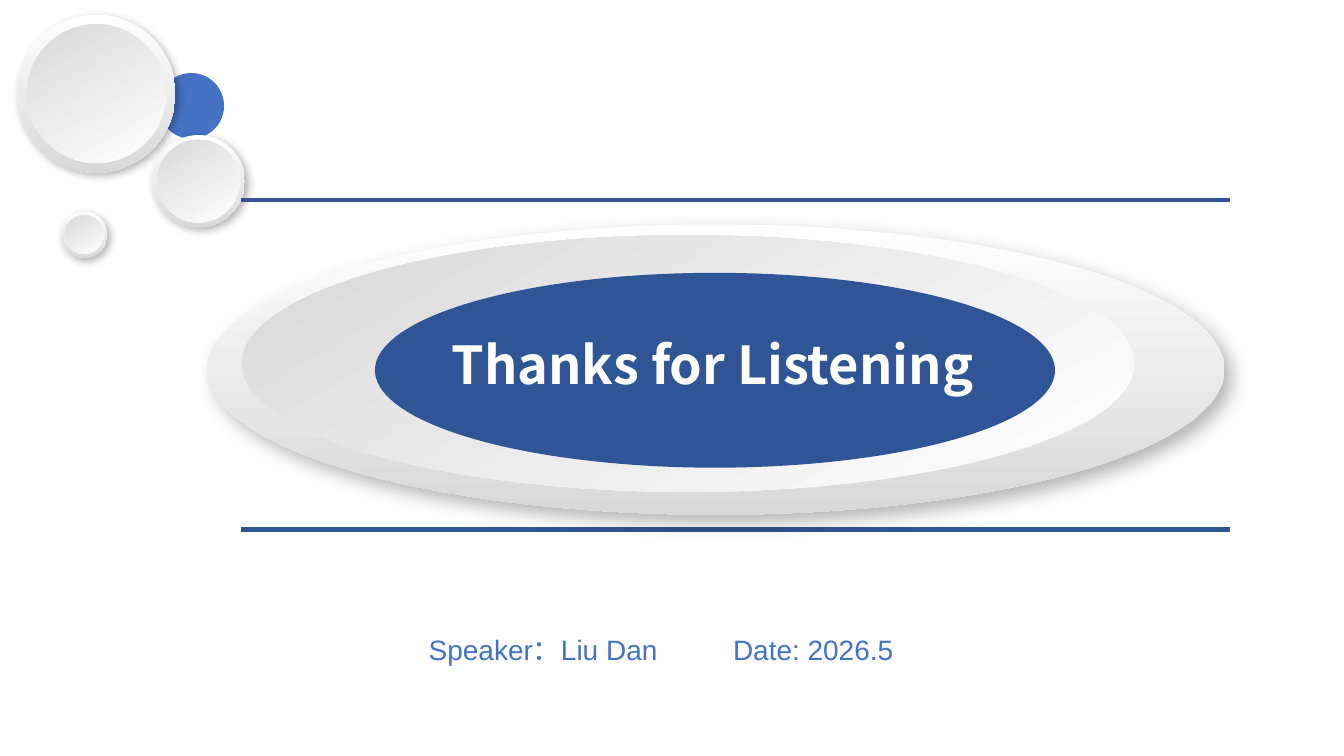
import pptx
import pptx.dml.color
import pptx.enum.shapes
import pptx.enum.text
import pptx.oxml
import pptx.oxml.ns
import pptx.util

RGBColor = pptx.dml.color.RGBColor
Inches = pptx.util.Inches
WHITE = RGBColor(0xFF, 0xFF, 0xFF)
SILVER = RGBColor(0xD9, 0xD9, 0xD9)
BLUE = RGBColor(0x44, 0x72, 0xC4)
NAVY = RGBColor(0x2F, 0x55, 0x97)
RULE_BLUE = RGBColor(0x32, 0x54, 0x91)

PAGE_WIDTH = 10
PAGE_HEIGHT = PAGE_WIDTH * 9 / 16
NAMESPACE = pptx.oxml.ns.nsdecls("a")


def add_ellipse(shapes, box):
    ellipse = shapes.add_shape(pptx.enum.shapes.MSO_SHAPE.OVAL, *map(Inches, box))
    ellipse.line.fill.background()
    ellipse.shadow.inherit = False
    return ellipse


def add_solid_ellipse(shapes, box, color):
    ellipse = add_ellipse(shapes, box)
    ellipse.fill.solid()
    ellipse.fill.fore_color.rgb = color


def add_silver_ellipse(shapes, box, angle):
    """Shade from white to silver; the angle runs counter-clockwise."""
    ellipse = add_ellipse(shapes, box)
    ellipse.fill.gradient()
    ellipse.fill.gradient_angle = angle
    for stop, color in zip(ellipse.fill.gradient_stops, (WHITE, SILVER)):
        stop.color.rgb = color
    return ellipse


def add_raised_ellipse(shapes, outer, inner, blur, distance):
    """Rim with a soft shadow and an inner face lit from the other side."""
    rim = add_silver_ellipse(shapes, outer, 270)
    effects = rim._element.spPr.find(pptx.oxml.ns.qn("a:effectLst"))
    effects.append(pptx.oxml.parse_xml(
        f'<a:outerShdw {NAMESPACE} blurRad="{pptx.util.Pt(blur)}" '
        f'dist="{pptx.util.Pt(distance)}" dir="2700000" algn="tl" rotWithShape="0">'
        '<a:srgbClr val="000000"><a:alpha val="30000"/></a:srgbClr></a:outerShdw>'))
    add_silver_ellipse(shapes, inner, 120)


def add_text(shapes, box, text, font_name, size, color, bold=False):
    text_box = shapes.add_textbox(*map(Inches, box))
    frame = text_box.text_frame
    frame.margin_left = frame.margin_right = frame.margin_top = frame.margin_bottom = 0
    frame.word_wrap = True
    frame.auto_size = pptx.enum.text.MSO_AUTO_SIZE.SHAPE_TO_FIT_TEXT
    span = frame.paragraphs[0].add_run()
    span.text = text
    span.font.name = font_name
    span.font.size = pptx.util.Pt(size)
    span.font.bold = bold
    span.font.color.rgb = color


def add_rule(page, left, top, width):
    rule = page.shapes.add_connector(
        pptx.enum.shapes.MSO_CONNECTOR.STRAIGHT,
        Inches(left), Inches(top), Inches(left + width), Inches(top))
    rule.line.color.rgb = RULE_BLUE
    rule.line.width = pptx.util.Pt(2.25)
    rule._element.spPr.append(pptx.oxml.parse_xml(f"<a:effectLst {NAMESPACE}/>"))


def add_corner_discs(page, left, top, size):
    """Blue dot and three raised discs, as shares of the cluster size."""
    def square(center_x, center_y, diameter):
        return (left + (center_x - diameter / 2) * size,
                top + (center_y - diameter / 2) * size,
                diameter * size, diameter * size)

    add_solid_ellipse(page.shapes, square(0.72, 0.38, 0.27), BLUE)
    # Center x, center y, rim diameter, face diameter
    discs = [(0.33, 0.33, 0.65, 0.57),
             (0.28, 0.91, 0.19, 0.16),
             (0.75, 0.69, 0.38, 0.34)]
    for center_x, center_y, rim, face in discs:
        add_raised_ellipse(page.shapes, square(center_x, center_y, rim),
                           square(center_x, center_y, face), 4.5, 2.2)


def add_title_emblem(page, left, top, width, height):
    """Raised oval with a navy center and the closing words."""
    group = page.shapes.add_group_shape()
    add_raised_ellipse(group.shapes, (left, top, width, height),
                       (left + 0.26, top + 0.08, width - 0.93, height - 0.25), 10, 6)
    add_solid_ellipse(group.shapes,
                      (left + 1.25, top + 0.36, width - 2.51, height - 0.71), NAVY)
    add_text(group.shapes, (left + 1.82, top + 0.8, width - 3.35, 0.47),
             "Thanks for Listening", "Noto Sans CJK SC", 28, WHITE, True)


def add_credits(page, left, top, width, height):
    """Speaker on the left, date on the right."""
    columns = [(0, 0.41, "Speaker：Liu Dan"), (0.51, 0.49, "Date: 2026.5")]
    for start, share, text in columns:
        add_text(page.shapes, (left + start * width, top, share * width, height),
                 text, "Arial", 15, BLUE)


def main():
    deck = pptx.Presentation()
    deck.slide_width = Inches(PAGE_WIDTH)
    deck.slide_height = Inches(PAGE_HEIGHT)
    page = deck.slides.add_slide(deck.slide_layouts[6])

    # The lower rule lies under the emblem, the upper one over the discs
    add_rule(page, 1.79, 3.94, 7.36)
    add_credits(page, 3.19, 4.71, 4.44, 0.25)
    add_corner_discs(page, 0.12, 0.1, 1.81)
    add_title_emblem(page, 1.54, 1.67, 7.57, 2.16)
    add_rule(page, 1.79, 1.49, 7.36)

    deck.save("out.pptx")


if __name__ == "__main__":
    main()
